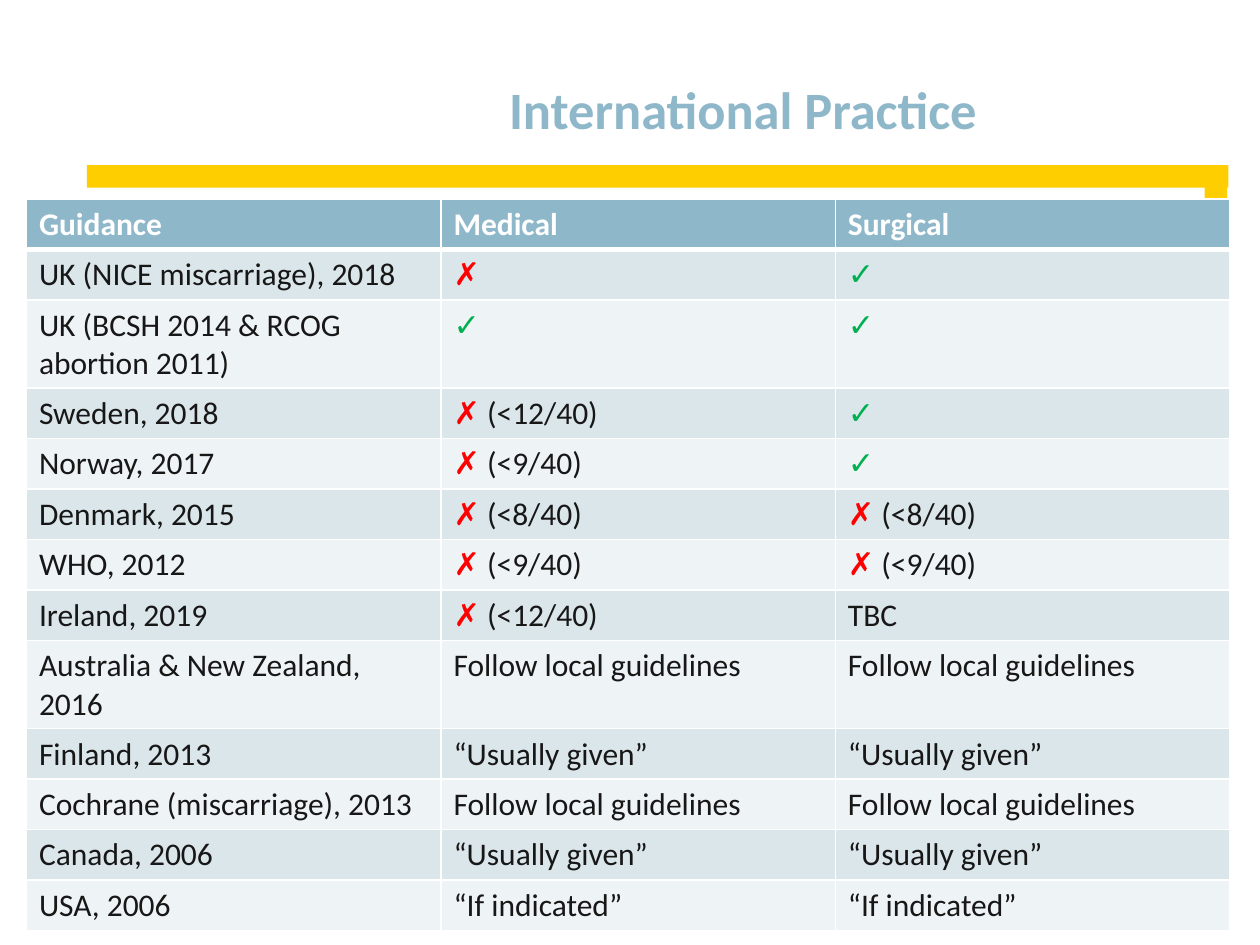
from typing import NamedTuple

from lxml import etree
from pptx import Presentation
from pptx import util as u
from pptx.dml.color import RGBColor
from pptx.enum import shapes, text
from pptx.oxml.ns import qn

BLUE = RGBColor(0x8E, 0xB8, 0xC9)
YELLOW = RGBColor(0xFF, 0xCE, 0x00)
WHITE = RGBColor(0xFF, 0xFF, 0xFF)
INK = RGBColor(0x18, 0x17, 0x17)
RED = RGBColor(0xFF, 0x00, 0x00)
GREEN = RGBColor(0x00, 0xB0, 0x50)
BANDS = (RGBColor(0xDB, 0xE6, 0xEB), RGBColor(0xEE, 0xF3, 0xF5))
MARK_COLORS = {"✗": RED, "✓": GREEN}
FONT = "Calibri"


class Bar(NamedTuple):
    left: float
    top: float
    width: float
    height: float


class Guidance(NamedTuple):
    source: str
    medical: str
    surgical: str
    height: float = 0.38


BARS = [Bar(0.69, 1.31, 9.06, 0.18), Bar(9.56, 1.31, 0.18, 5.51)]
COLUMN_WIDTHS = (3.29, 3.13, 3.13)
LOCAL = "Follow local guidelines"
USUAL = "“Usually given”"
ROWS = [
    Guidance("Guidance", "Medical", "Surgical"),
    Guidance("UK (NICE miscarriage), 2018", "✗", "✓"),
    Guidance("UK (BCSH 2014 & RCOG abortion 2011)", "✓", "✓", 0.66),
    Guidance("Sweden, 2018", "✗ (<12/40)", "✓"),
    Guidance("Norway, 2017", "✗ (<9/40)", "✓"),
    Guidance("Denmark, 2015", "✗ (<8/40)", "✗ (<8/40)"),
    Guidance("WHO, 2012", "✗ (<9/40)", "✗ (<9/40)"),
    Guidance("Ireland, 2019", "✗ (<12/40)", "TBC"),
    Guidance("Australia & New Zealand, 2016", LOCAL, LOCAL, 0.66),
    Guidance("Finland, 2013", USUAL, USUAL),
    Guidance("Cochrane (miscarriage), 2013", LOCAL, LOCAL),
    Guidance("Canada, 2006", USUAL, USUAL),
    Guidance("USA, 2006", "“If indicated”", "“If indicated”"),
]


def add_run(p, words: str, size: float, color: RGBColor, bold: bool = False) -> None:
    r = p.add_run()
    r.text = words
    for name, value in {"name": FONT, "size": u.Pt(size), "bold": bold}.items():
        setattr(r.font, name, value)
    r.font.color.rgb = color


def add_bar(s, bar: Bar) -> None:
    sp = s.shapes.add_shape(shapes.MSO_SHAPE.RECTANGLE, *map(u.Inches, bar))
    sp.shadow.inherit = False
    sp.fill.solid()
    sp.fill.fore_color.rgb = YELLOW
    sp.line.fill.background()


def add_title(s, words: str) -> None:
    sp = s.shapes.add_textbox(*map(u.Inches, (0.68, 0.28, 8.62, 0.89)))
    tf = sp.text_frame
    settings = {
        "word_wrap": True,
        "vertical_anchor": text.MSO_ANCHOR.BOTTOM,
        "margin_left": u.Inches(3.36),
    }
    for name, value in settings.items():
        setattr(tf, name, value)
    p = tf.paragraphs[0]
    p.line_spacing = 0.9
    add_run(p, words, 30, BLUE, bold=True)


def set_borders(cell, widths: dict[str, float]) -> None:
    """Draw white cell borders; widths are in points, keyed by side tag."""
    tc_pr = cell._tc.get_or_add_tcPr()
    for i, (side, width) in enumerate(widths.items()):
        ln = etree.Element(qn(f"a:{side}"), w=str(u.Pt(width)))
        fill = etree.SubElement(ln, qn("a:solidFill"))
        etree.SubElement(fill, qn("a:srgbClr"), val=str(WHITE))
        tc_pr.insert(i, ln)


def fill_cell(cell, words: str, row: int) -> None:
    header = row == 0
    cell.fill.solid()
    cell.fill.fore_color.rgb = BLUE if header else BANDS[(row - 1) % 2]
    set_borders(cell, {"lnL": 1, "lnR": 1, "lnT": 3 if row == 1 else 1,
                       "lnB": 3 if header else 1})
    p = cell.text_frame.paragraphs[0]
    mark = words[0]
    if mark in MARK_COLORS:
        add_run(p, mark, 18, MARK_COLORS[mark])
        words = words[1:]
    if words:
        add_run(p, words, 18, WHITE if header else INK, bold=header)


def add_guidance_table(s) -> None:
    height = sum(row.height for row in ROWS)
    frame = s.shapes.add_table(
        len(ROWS), len(COLUMN_WIDTHS),
        *map(u.Inches, (0.21, 1.58, sum(COLUMN_WIDTHS), height)))
    table = frame.table
    for column, width in zip(table.columns, COLUMN_WIDTHS):
        column.width = u.Inches(width)
    for i, row in enumerate(ROWS):
        table.rows[i].height = u.Inches(row.height)
        for j, words in enumerate((row.source, row.medical, row.surgical)):
            fill_cell(table.cell(i, j), words, i)


def main() -> None:
    prs = Presentation()
    prs.slide_width, prs.slide_height = u.Inches(10), u.Inches(7.5)
    s = prs.slides.add_slide(prs.slide_layouts[6])
    for bar in BARS:
        add_bar(s, bar)
    add_title(s, "International Practice")
    add_guidance_table(s)
    prs.save("out.pptx")


if __name__ == "__main__":
    main()
